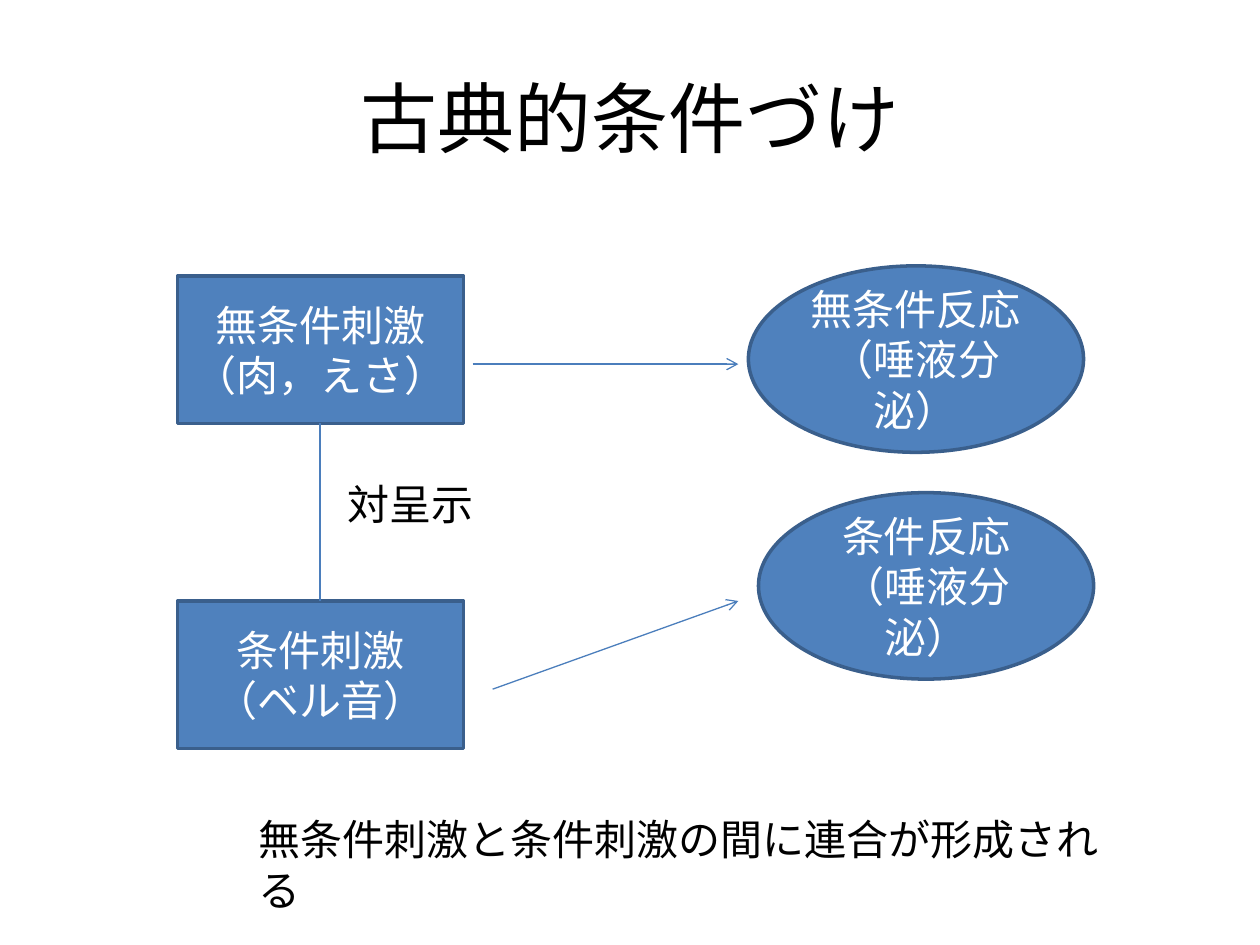
import pptx
import pptx.util
import pptx.dml.color
import pptx.enum.shapes
import pptx.enum.text
import pptx.oxml
import pptx.oxml.ns
from pptx.util import Inches

FONT = "Calibri"
FILL, OUTLINE, LINE = "4F81BD", "3A5F8C", "4B7EBC"
BLACK, WHITE = "000000", "FFFFFF"
SHAPE = pptx.enum.shapes.MSO_SHAPE
ALIGN = pptx.enum.text.PP_ALIGN
ANCHOR = pptx.enum.text.MSO_ANCHOR
STIMULUS_SIZE = (2.27, 1.17)
RESPONSE_SIZE = (2.66, 1.48)


def rgb(color):
    return pptx.dml.color.RGBColor.from_string(color)


def set_text(sp, text, size, color, align, anchor):
    tf = sp.text_frame
    tf.text = text
    tf.word_wrap = True
    tf.vertical_anchor = anchor
    for p in tf.paragraphs:
        p.alignment = align
        for r in p.runs:
            r.font.name = FONT
            r.font.size = pptx.util.Pt(size)
            r.font.color.rgb = rgb(color)


def add_title(s, text):
    sp = s.shapes.title
    sp.left, sp.top = Inches(0.5), Inches(0.3)
    sp.width, sp.height = Inches(9), Inches(1.25)
    set_text(sp, text, 44, BLACK, ALIGN.CENTER, ANCHOR.MIDDLE)


def add_node(s, kind, left, top, size, text):
    sp = s.shapes.add_shape(kind, Inches(left), Inches(top), *map(Inches, size))
    sp.shadow.inherit = False
    sp.fill.solid()
    sp.fill.fore_color.rgb = rgb(FILL)
    sp.line.color.rgb = rgb(OUTLINE)
    sp.line.width = pptx.util.Pt(2)
    set_text(sp, text, 24, WHITE, ALIGN.CENTER, ANCHOR.MIDDLE)


def add_line(s, start, end, arrow=False):
    cxn = s.shapes.add_connector(
        pptx.enum.shapes.MSO_CONNECTOR.STRAIGHT, *map(Inches, start + end))
    cxn.line.color.rgb = rgb(LINE)
    cxn.line.width = pptx.util.Pt(0.75)
    if arrow:
        tail = pptx.oxml.parse_xml(
            f'<a:tailEnd {pptx.oxml.ns.nsdecls("a")} type="arrow"/>')
        cxn.line._get_or_add_ln().append(tail)
    cxn._element.spPr.append(pptx.oxml.parse_xml(
        f'<a:effectLst {pptx.oxml.ns.nsdecls("a")}/>'))


def add_label(s, left, top, width, text):
    sp = s.shapes.add_textbox(
        Inches(left), Inches(top), Inches(width), Inches(0.5))
    set_text(sp, text, 24, BLACK, ALIGN.LEFT, ANCHOR.TOP)


def main():
    prs = pptx.Presentation()
    prs.slide_width, prs.slide_height = Inches(10), Inches(7.5)
    s = prs.slides.add_slide(prs.slide_layouts.get_by_name("Title Only"))

    add_title(s, "古典的条件づけ")

    add_node(s, SHAPE.RECTANGLE, 1.41, 2.19, STIMULUS_SIZE, "無条件刺激\n（肉，えさ）")
    add_node(s, SHAPE.OVAL, 5.94, 2.11, RESPONSE_SIZE, "無条件反応\n（唾液分泌）")
    add_line(s, (3.75, 2.89), (5.86, 2.89), arrow=True)

    add_node(s, SHAPE.RECTANGLE, 1.41, 4.77, STIMULUS_SIZE, "条件刺激\n（ベル音）")
    add_line(s, (2.54, 3.36), (2.54, 4.77))
    add_node(s, SHAPE.OVAL, 6.02, 3.91, RESPONSE_SIZE, "条件反応\n（唾液分泌）")
    add_line(s, (3.91, 5.47), (5.86, 4.77), arrow=True)

    add_label(s, 2.66, 3.75, 1.25, "対呈示")
    add_label(s, 1.95, 6.41, 7.05, "無条件刺激と条件刺激の間に連合が形成される")

    prs.save("out.pptx")


if __name__ == "__main__":
    main()
